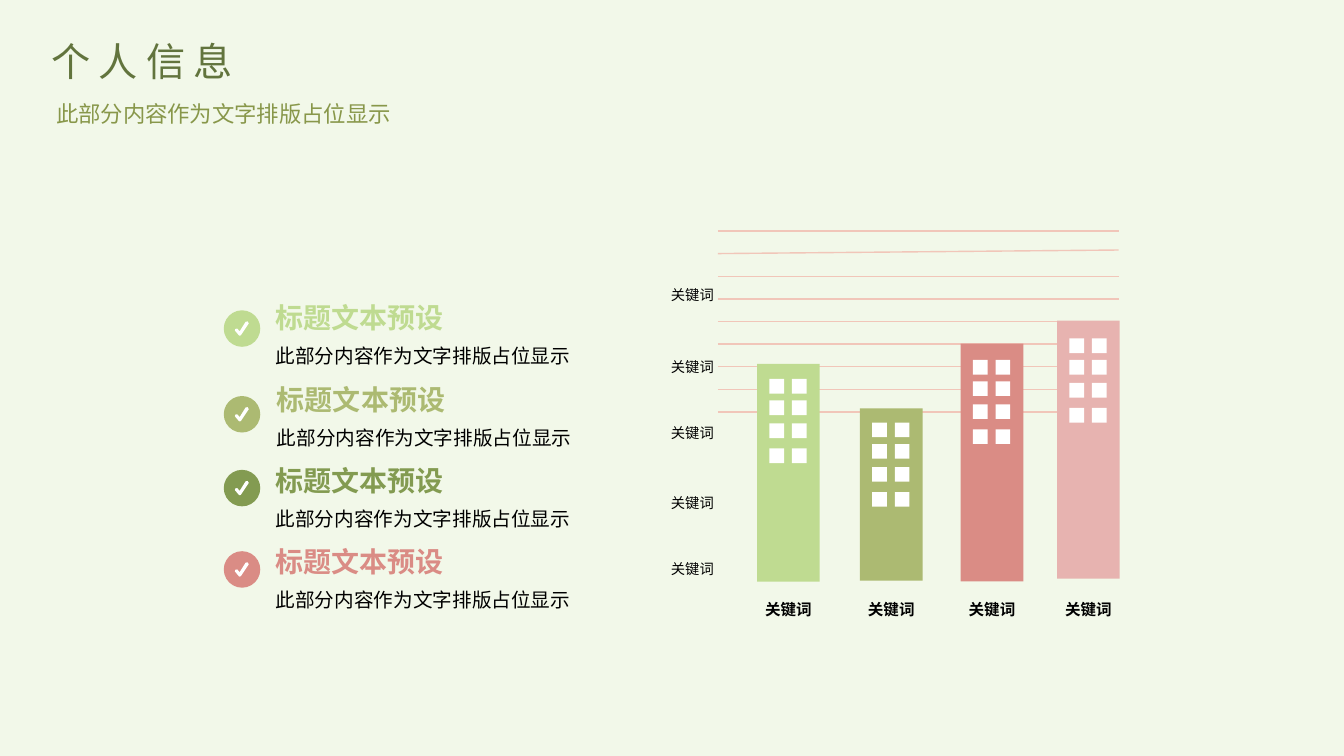
from pptx import Presentation
from pptx.dml.color import RGBColor
from pptx.enum.shapes import MSO_CONNECTOR, MSO_SHAPE
from pptx.enum.text import MSO_ANCHOR, PP_ALIGN
from pptx.oxml.ns import qn
from pptx.util import Cm, Pt
from lxml import etree

RECTANGLE, OVAL = MSO_SHAPE.RECTANGLE, MSO_SHAPE.OVAL
STRAIGHT = MSO_CONNECTOR.STRAIGHT
LEFT, CENTER, RIGHT = PP_ALIGN.LEFT, PP_ALIGN.CENTER, PP_ALIGN.RIGHT
TOP, MIDDLE = MSO_ANCHOR.TOP, MSO_ANCHOR.MIDDLE

FONT = "Noto Sans CJK SC"
COLORS = {
    "background": "F2F8E9",
    "title": "62743D",
    "subtitle": "88974A",
    "text": "000000",
    "white": "FFFFFF",
    "grid": "F1C6B9",
    "lime": "BFDB91",
    "olive": "ACBA72",
    "green": "839B51",
    "coral": "DA8C85",
    "pink": "E7B3B0",
}
KEYWORD = "关键词"
ITEM_TITLE = "标题文本预设"
PLACEHOLDER_TEXT = "此部分内容作为文字排版占位显示"

# Colour, icon top, text left, text top (cm)
ITEMS = [
    ("lime", 7.82, 6.55, 7.75),
    ("olive", 9.98, 6.58, 9.8),
    ("green", 11.84, 6.55, 11.84),
    ("coral", 13.89, 6.55, 13.89),
]
# Colour, left, top, height, top of the first window row (cm)
BUILDINGS = [
    ("lime", 19.08, 9.17, 5.49, 9.55),
    ("olive", 21.67, 10.29, 4.34, 10.65),
    ("coral", 24.21, 8.66, 5.99, 9.07),
    ("pink", 26.64, 8.08, 6.5, 8.53),
]
BUILDING_WIDTH = 1.58
WINDOW_COLUMNS = (0.31, 0.88)
WINDOW_ROWS = (0, 0.54, 1.12, 1.75)
SCALE_LABEL_TOPS = (7.09, 8.89, 10.57, 12.32, 14)
# Tick outline, in hundredths of a centimetre from the icon corner
TICK = [(40, 64), (38, 63), (28, 51), (29, 47), (34, 46),
        (40, 53), (55, 29), (60, 28), (63, 33), (43, 63)]


def rgb(name):
    return RGBColor.from_string(COLORS[name])


def paint(shape, color):
    shape.shadow.inherit = False
    shape.fill.solid()
    shape.fill.fore_color.rgb = rgb(color)
    shape.line.fill.background()


def add_block(slide, kind, left, top, width, height, color):
    shape = slide.shapes.add_shape(kind, Cm(left), Cm(top), Cm(width), Cm(height))
    paint(shape, color)


def add_text(slide, text, left, top, width, height, size, color="text", bold=False,
             align=LEFT, anchor=TOP, wrap=False, insets=(0.25, 0.13),
             line_spacing=None, letter_spacing=None):
    box = slide.shapes.add_textbox(Cm(left), Cm(top), Cm(width), Cm(height))
    frame = box.text_frame
    frame.word_wrap = wrap
    frame.vertical_anchor = anchor
    frame.margin_left = frame.margin_right = Cm(insets[0])
    frame.margin_top = frame.margin_bottom = Cm(insets[1])
    paragraph = frame.paragraphs[0]
    paragraph.alignment = align
    paragraph.line_spacing = line_spacing
    run = paragraph.add_run()
    run.text = text
    run.font.name = FONT
    run.font.size = Pt(size)
    run.font.bold = bold
    run.font.color.rgb = rgb(color)
    properties = run.font._element
    etree.SubElement(properties, qn("a:ea")).set("typeface", FONT)
    if letter_spacing:
        properties.set("spc", str(letter_spacing * 100))


def add_grid_line(slide, start_y, end_y):
    line = slide.shapes.add_connector(
        STRAIGHT, Cm(18.09), Cm(start_y), Cm(28.19), Cm(end_y))
    line.line.color.rgb = rgb("grid")
    line.line.width = Pt(1)
    etree.SubElement(line._element.spPr, qn("a:effectLst"))


def add_building(slide, color, left, top, height, window_top):
    add_block(slide, RECTANGLE, left, top, BUILDING_WIDTH, height, color)
    for row in WINDOW_ROWS:
        for column in WINDOW_COLUMNS:
            add_block(slide, RECTANGLE, left + column, window_top + row,
                      0.37, 0.37, "white")
    label_width = 1.5
    add_text(slide, KEYWORD, left + (BUILDING_WIDTH - label_width) / 2, 14.99,
             label_width, 0.64, 11.1, bold=True, align=CENTER, insets=(0.1, 0.13))


def add_tick_icon(slide, left, top, color):
    add_block(slide, OVAL, left, top, 0.92, 0.92, color)
    builder = slide.shapes.build_freeform(*TICK[0], scale=Cm(0.01))
    builder.add_line_segments(TICK[1:], close=True)
    paint(builder.convert_to_shape(Cm(left), Cm(top)), "white")


def add_item(slide, color, icon_top, left, top):
    add_tick_icon(slide, 5.64, icon_top, color)
    add_text(slide, ITEM_TITLE, left, top, 5.2, 0.51, 20, color, bold=True,
             anchor=MIDDLE, insets=(0.4, 0))
    add_text(slide, PLACEHOLDER_TEXT, left, top + 0.81, 8.86, 0.76, 14,
             wrap=True, insets=(0.4, 0), line_spacing=1.2)


def main():
    presentation = Presentation()
    presentation.slide_width = Cm(33.87)
    presentation.slide_height = Cm(19.05)
    slide = presentation.slides.add_slide(presentation.slide_layouts[6])
    slide.background.fill.solid()
    slide.background.fill.fore_color.rgb = rgb("background")

    # Grid lines, the second one slightly tilted
    for index in range(9):
        y = 5.82 + 0.57 * index
        add_grid_line(slide, y, y - 0.09 if index == 1 else y)

    # Scale labels and buildings
    for top in SCALE_LABEL_TOPS:
        add_text(slide, KEYWORD, 16.66, top, 1.7, 0.61, 10.2)
    for building in BUILDINGS:
        add_building(slide, *building)

    # Checked list
    for item in ITEMS:
        add_item(slide, *item)

    # Heading
    add_text(slide, "个人信息", 1.04, 0.81, 6.99, 1.45, 28, "title",
             wrap=True, letter_spacing=6)
    add_text(slide, PLACEHOLDER_TEXT, 1.04, 2.26, 9.07, 1.02, 16, "subtitle",
             align=RIGHT, line_spacing=1.2)

    presentation.save("out.pptx")


if __name__ == "__main__":
    main()
